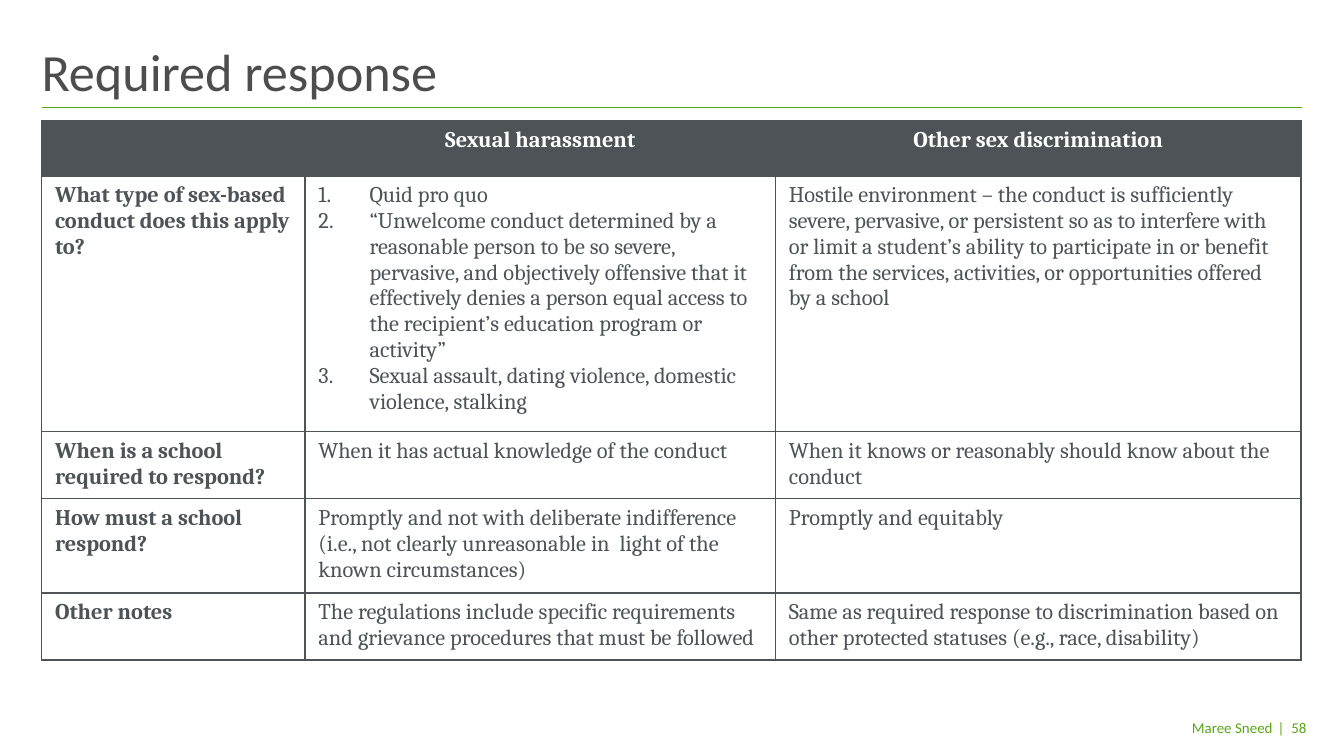
from dataclasses import dataclass

from lxml import etree
from pptx import Presentation
from pptx import util as u
from pptx.dml.color import RGBColor
from pptx.enum import shapes, text
from pptx.oxml.ns import qn


@dataclass(frozen=True)
class Theme:
    green: str = "58A618"
    slate: str = "4D5357"
    title_gray: str = "4D4D4D"
    white: str = "FFFFFF"
    heading_font: str = "Calibri"
    body_font: str = "Cambria"
    title_size: int = 28
    table_size: int = 12
    footer_size: int = 8


theme = Theme()
Inches = u.Inches


def write(frame, content, *, size, color, font, bold=False,
          align=text.PP_ALIGN.LEFT, numbered=False):
    """Fill a text frame with one string, or a list of paragraphs."""
    lines = [content] if isinstance(content, str) else content
    for index, line in enumerate(lines):
        paragraph = frame.paragraphs[0] if index == 0 else frame.add_paragraph()
        paragraph.alignment = align
        run = paragraph.add_run()
        run.text = line
        run.font.size = u.Pt(size)
        run.font.name = font
        run.font.bold = bold
        run.font.color.rgb = RGBColor.from_string(color)
        if numbered:
            properties = paragraph._p.get_or_add_pPr()
            properties.set("marL", str(Inches(0.38)))
            properties.set("indent", str(Inches(-0.38)))
            etree.SubElement(properties, qn("a:buAutoNum"), type="arabicPeriod")


def add_cell_borders(cell):
    """Draw a thin line on all four sides; borders precede the fill in the XML."""
    properties = cell._tc.get_or_add_tcPr()
    for position, side in enumerate(("lnL", "lnR", "lnT", "lnB")):
        line = etree.Element(qn(f"a:{side}"), w=str(u.Pt(1)))
        fill = etree.SubElement(line, qn("a:solidFill"))
        etree.SubElement(fill, qn("a:srgbClr"), val=theme.slate)
        properties.insert(position, line)


# Widescreen 16:9 slide
presentation = Presentation()
presentation.slide_width = Inches(10)
presentation.slide_height = Inches(10) * 9 // 16
slide = presentation.slides.add_slide(presentation.slide_layouts[6])

# Rule under the title, without the theme's line style and shadow
rule = slide.shapes.add_connector(
    shapes.MSO_CONNECTOR.STRAIGHT, Inches(9.69), Inches(0.8), Inches(0.31), Inches(0.8))
rule.line.color.rgb = RGBColor.from_string(theme.green)
rule.line.width = u.Pt(0.5)
etree.SubElement(rule._element.spPr, qn("a:effectLst"))
rule._element.remove(rule._element.find(qn("p:style")))

# Title and footer: content, box, (vertical, right) insets, wrap, anchor, format
footer = dict(size=theme.footer_size, color=theme.green, font=theme.heading_font,
              align=text.PP_ALIGN.RIGHT)
title = dict(size=theme.title_size, color=theme.title_gray, font=theme.heading_font)
middle, bottom = text.MSO_ANCHOR.MIDDLE, text.MSO_ANCHOR.BOTTOM
text_boxes = [
    ("Maree Sneed", (6.3, 5.29, 3.17, 0.24), (0.05, 0), True, middle, footer),
    ("|  58", (9.49, 5.29, 0.33, 0.24), (0.05, 0.1), False, middle, footer),
    ("Required response", (0.31, 0.31, 9.37, 0.49), (0.04, 0), True, bottom, title),
]
for content, box, (vertical_inset, right_inset), wrap, anchor, style in text_boxes:
    frame = slide.shapes.add_textbox(*map(Inches, box)).text_frame
    frame.margin_left = 0
    frame.margin_right = Inches(right_inset)
    frame.margin_top = frame.margin_bottom = Inches(vertical_inset)
    frame.word_wrap = wrap
    frame.vertical_anchor = anchor
    write(frame, content, **style)

# Comparison table
rows = [
    ("", "Sexual harassment", "Other sex discrimination"),
    ("What type of sex-based conduct does this apply to?",
     ["Quid pro quo",
      "“Unwelcome conduct determined by a reasonable person to be so severe, "
      "pervasive, and objectively offensive that it effectively denies a person "
      "equal access to the recipient’s education program or activity”",
      "Sexual assault, dating violence, domestic violence, stalking"],
     "Hostile environment – the conduct is sufficiently severe, pervasive, or "
     "persistent so as to interfere with or limit a student’s ability to "
     "participate in or benefit from the services, activities, or opportunities "
     "offered by a school"),
    ("When is a school required to respond?",
     "When it has actual knowledge of the conduct",
     "When it knows or reasonably should know about the conduct"),
    ("How must a school respond?",
     "Promptly and not with deliberate indifference (i.e., not clearly "
     "unreasonable in  light of the known circumstances)",
     "Promptly and equitably"),
    ("Other notes",
     "The regulations include specific requirements and grievance procedures "
     "that must be followed",
     "Same as required response to discrimination based on other protected "
     "statuses (e.g., race, disability)"),
]
column_widths = (1.96, 3.5, 3.91)
row_height = 0.41
table_frame = slide.shapes.add_table(
    len(rows), len(column_widths), Inches(0.31), Inches(0.9),
    Inches(sum(column_widths)), Inches(row_height * len(rows)))
table = table_frame.table
for column, width in zip(table.columns, column_widths):
    column.width = Inches(width)
table_frame.height = Inches(4.41)

for row_index, row in enumerate(rows):
    is_header = row_index == 0
    for column_index, content in enumerate(row):
        cell = table.cell(row_index, column_index)
        cell.fill.solid()
        cell.fill.fore_color.rgb = RGBColor.from_string(
            theme.slate if is_header else theme.white)
        add_cell_borders(cell)
        if content:
            write(cell.text_frame, content, size=theme.table_size, font=theme.body_font,
                  color=theme.white if is_header else theme.slate,
                  bold=is_header or column_index == 0,
                  align=text.PP_ALIGN.CENTER if is_header else text.PP_ALIGN.LEFT,
                  numbered=isinstance(content, list))

presentation.save("out.pptx")
